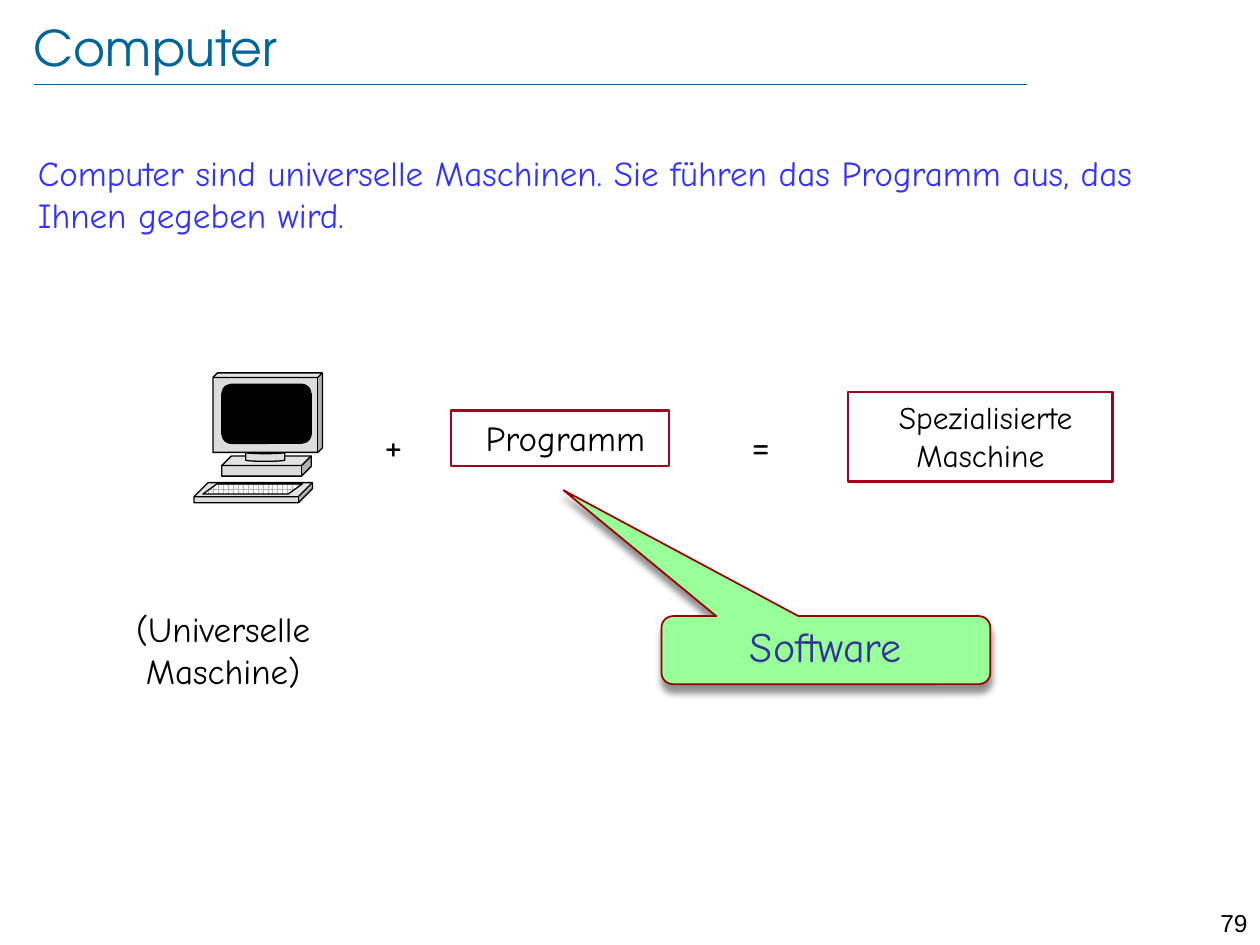
import dataclasses

import lxml.etree
import pptx
import pptx.dml.color
import pptx.enum.dml
import pptx.enum.shapes
import pptx.enum.text
import pptx.oxml.ns
import pptx.util

Pt = pptx.util.Pt
qn = pptx.oxml.ns.qn
Shape = pptx.enum.shapes.MSO_SHAPE
Align = pptx.enum.text.PP_ALIGN
Anchor = pptx.enum.text.MSO_ANCHOR


def rgb(code):
    return pptx.dml.color.RGBColor.from_string(code)


@dataclasses.dataclass(frozen=True)
class Theme:
    title_font: str = "TeX Gyre Adventor"
    body_font: str = "Comic Neue"
    number_font: str = "Arial"
    title: str = "006699"
    body: str = "3333FF"
    ink: str = "000000"
    casing: str = "DDDDDD"
    keys: str = "B2B2B2"
    paper: str = "FFFFFF"
    frame: str = "A50021"
    callout_fill: str = "99FF99"
    callout_line: str = "990000"
    callout_text: str = "333399"
    title_size: int = 28
    large: int = 24
    normal: int = 20
    small: int = 18
    number_size: int = 14


class SlideBuilder:
    """Holds the theme and the slide; every box is (left, top, width, height) in points."""

    def __init__(self, slide, theme):
        self.slide = slide
        self.theme = theme

    def set_text(self, shape, text, size, color, font=None, align=Align.CENTER,
                 anchor=Anchor.TOP, insets=(7.2, 3.6), first_indent=0):
        frame = shape.text_frame
        frame.word_wrap = True
        frame.auto_size = pptx.enum.text.MSO_AUTO_SIZE.NONE
        frame.vertical_anchor = anchor
        frame.margin_left = frame.margin_right = Pt(insets[0])
        frame.margin_top = frame.margin_bottom = Pt(insets[1])
        frame.text = text
        paragraph = frame.paragraphs[0]
        properties = paragraph._p.get_or_add_pPr()
        properties.set("marL", "0")
        properties.set("indent", str(Pt(first_indent)))
        lxml.etree.SubElement(properties, qn("a:buNone"))
        paragraph.alignment = align
        paragraph.space_before = Pt(0)
        paragraph.font.name = font or self.theme.body_font
        paragraph.font.size = Pt(size)
        paragraph.font.color.rgb = rgb(color)
        return paragraph

    def placeholder(self, index, box, text, size, color, **style):
        shape = self.slide.placeholders[index]
        shape.left, shape.top, shape.width, shape.height = map(Pt, box)
        self.set_text(shape, text, size, color, align=Align.LEFT, **style)

    def label(self, box, text, size, **style):
        shape = self.slide.shapes.add_textbox(*map(Pt, box))
        self.set_text(shape, text, size, self.theme.ink, **style)

    def shape(self, preset, box, fill=None, line="000000", weight=0.75,
              adjustments=(), parent=None):
        shape = (parent or self.slide).shapes.add_shape(preset, *map(Pt, box))
        shape.shadow.inherit = False
        for position, value in enumerate(adjustments):
            shape.adjustments[position] = value
        if fill:
            shape.fill.solid()
            shape.fill.fore_color.rgb = rgb(fill)
        else:
            shape.fill.background()
        shape.line.color.rgb = rgb(line)
        shape.line.width = Pt(weight)
        return shape

    def framed_term(self, box, text, size):
        shape = self.shape(Shape.RECTANGLE, box, line=self.theme.frame, weight=1.5)
        self.set_text(shape, text, size, self.theme.ink, first_indent=6)

    def rule(self, start, end, color, weight):
        line = self.slide.shapes.add_connector(
            pptx.enum.shapes.MSO_CONNECTOR.STRAIGHT, *map(Pt, start + end))
        line.line.color.rgb = rgb(color)
        line.line.width = Pt(weight)
        lxml.etree.SubElement(line._element.spPr, qn("a:effectLst"))

    def callout(self, box, text, adjustments):
        theme = self.theme
        shape = self.shape(Shape.ROUNDED_RECTANGULAR_CALLOUT, box, theme.callout_fill,
                           theme.callout_line, 1, adjustments)
        effects = shape._element.spPr.find(qn("a:effectLst"))
        shadow = lxml.etree.SubElement(
            effects, qn("a:outerShdw"), blurRad=str(Pt(4)), dist=str(Pt(4)),
            dir="5400000", rotWithShape="0")
        color = lxml.etree.SubElement(shadow, qn("a:srgbClr"), val=theme.ink)
        lxml.etree.SubElement(color, qn("a:alpha"), val="43000")
        paragraph = self.set_text(shape, text, theme.large, theme.callout_text,
                                  anchor=Anchor.MIDDLE, insets=(0, 3.6))
        paragraph.line_spacing = 0.8

    def computer(self):
        theme = self.theme
        group = self.slide.shapes.add_group_shape()
        parts = [
            (Shape.CUBE, (126.7, 260.6, 51.1, 11.5), theme.casing, 0.478),
            (Shape.CAN, (140.4, 257.8, 22.3, 5.8), theme.casing, 0.25),
            (Shape.CUBE, (121.7, 213.1, 62.6, 45.4), theme.casing, 0.058),
            (Shape.ROUNDED_RECTANGLE, (126.7, 219.6, 51.1, 33.8), theme.ink, 0.167),
            (Shape.CUBE, (110.9, 275.8, 67.7, 11.5), theme.casing, 0.7),
            (Shape.PARALLELOGRAM, (115.9, 276.5, 56.9, 5.8), theme.paper, 1.391),
        ]
        for preset, box, fill, adjustment in parts:
            keyboard = self.shape(preset, box, fill, theme.ink,
                                  adjustments=(adjustment,), parent=group)
        keyboard.fill.patterned()
        keyboard.fill.pattern = pptx.enum.dml.MSO_PATTERN.SPHERE
        keyboard.fill.fore_color.rgb = rgb(theme.keys)
        keyboard.fill.back_color.rgb = rgb(theme.paper)


def main():
    theme = Theme()
    presentation = pptx.Presentation()
    presentation.slide_width, presentation.slide_height = Pt(720), Pt(540)
    slide = presentation.slides.add_slide(presentation.slide_layouts[1])
    builder = SlideBuilder(slide, theme)

    builder.rule((19.4, 48.2), (586.8, 48.2), theme.title, 0.25)
    builder.label((680.4, 515.5, 39.6, 17.3), "79", theme.number_size,
                  font=theme.number_font, align=Align.RIGHT)
    builder.placeholder(0, (19.4, 9.4, 625.7, 34.6), "Computer", theme.title_size,
                        theme.title, font=theme.title_font,
                        anchor=Anchor.MIDDLE, insets=(0, 0))
    builder.placeholder(1, (14.4, 82.8, 648, 356.4),
                        "Computer sind universelle Maschinen. Sie führen das "
                        "Programm aus, das Ihnen gegeben wird.",
                        theme.normal, theme.body)

    builder.computer()
    builder.label((31, 343.4, 193, 55.4), "(Universelle Maschine)", theme.normal)
    for operator, left in (("+", 212.4), ("=", 422.6)):
        builder.label((left, 235.4, 22.3, 28.8), operator, theme.large)
    builder.framed_term((257.8, 234.7, 124.6, 31.7), "Programm", theme.normal)
    builder.framed_term((484.6, 223.9, 151.2, 51.1), "Spezialisierte Maschine",
                        theme.small)
    builder.callout((378, 352.1, 187.9, 38.9), "Software", (-0.798, -2.35, 0.167))

    presentation.save("out.pptx")


if __name__ == "__main__":
    main()
